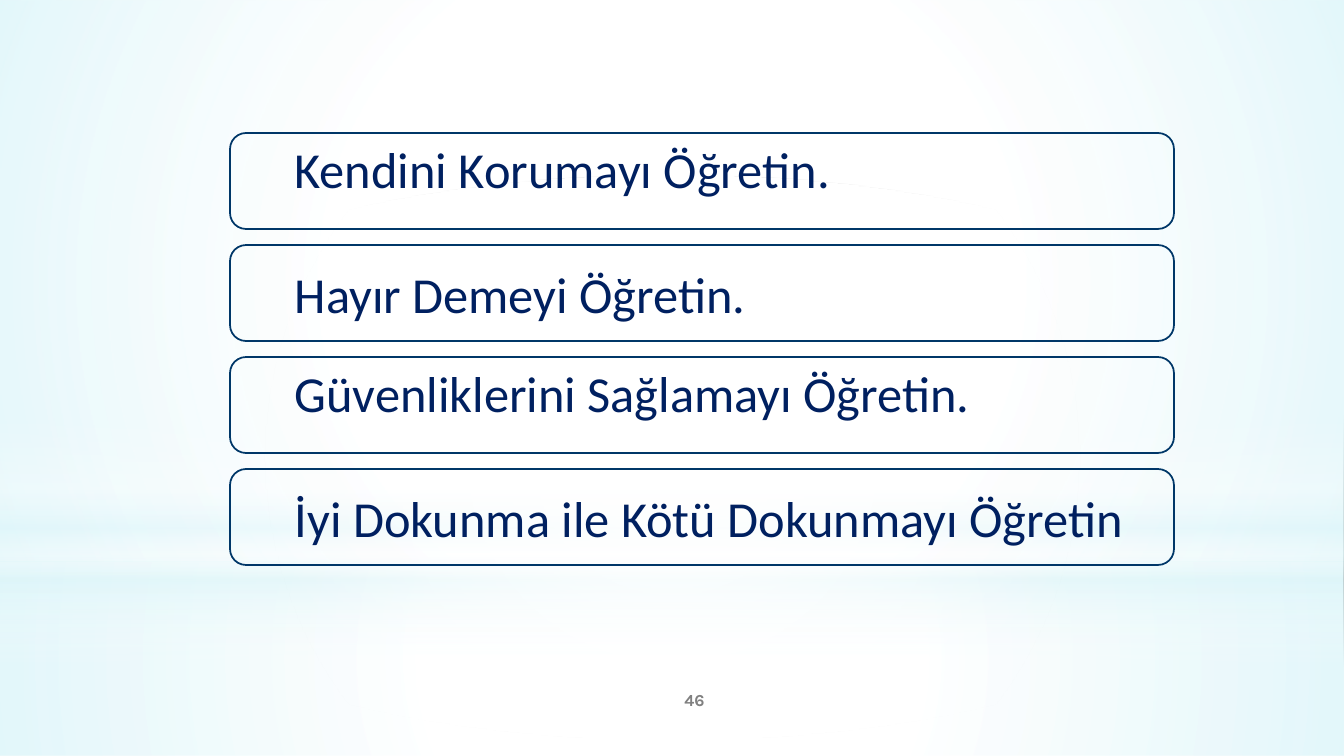
from dataclasses import dataclass

from lxml import etree
from pptx import Presentation
from pptx import util as u
from pptx.dml.color import RGBColor
from pptx.enum import shapes, text
from pptx.oxml import ns

EMU_PER_PX = 914400 / 100.8
WHITE, AQUA, NAVY, OUTLINE, GREY = "FFFFFF", "DBF5F9", "002060", "003768", "808080"


@dataclass
class Stop:
    position: int  # percent
    color: str
    alpha: int = 100  # percent


@dataclass
class Glow:
    top: int
    height: int
    stops: list[Stop]
    radial: bool = True
    outline: shapes.MSO_SHAPE = shapes.MSO_SHAPE.RECTANGLE


@dataclass
class Advice:
    words: str
    raised: bool = False


GLOWS = [
    Glow(562, 194, [Stop(0, WHITE, 91), Stop(37, WHITE, 76), Stop(100, AQUA, 79)]),
    Glow(0, 562, [Stop(0, WHITE, 89), Stop(48, WHITE, 62), Stop(100, AQUA, 79)]),
    Glow(415, 252, [Stop(0, WHITE, 0), Stop(29, WHITE, 30), Stop(45, AQUA, 40),
                    Stop(55, WHITE, 26), Stop(65, AQUA, 60), Stop(100, WHITE, 0)],
         radial=False),
    Glow(176, 562, [Stop(0, WHITE), Stop(56, WHITE, 0)],
         outline=shapes.MSO_SHAPE.OVAL),
]
ADVICE = [
    Advice("Kendini Korumayı Öğretin.", raised=True),
    Advice("Hayır Demeyi Öğretin."),
    Advice("Güvenliklerini Sağlamayı Öğretin.", raised=True),
    Advice("İyi Dokunma ile Kötü Dokunmayı Öğretin"),
]
SLIDE_WIDTH, SLIDE_HEIGHT = 1344, 756
BOX_LEFT, BOX_TOP, BOX_WIDTH, BOX_HEIGHT, BOX_PITCH = 230, 133, 944, 96, 112


def px(length: int) -> u.Emu:
    return u.Emu(round(length * EMU_PER_PX))


def rgb(color: str) -> RGBColor:
    return RGBColor.from_string(color)


def add_words(paragraph, words: str, font: str, size: int, color: str,
              bold: bool = False) -> None:
    run = paragraph.add_run()
    run.text = words
    run.font.name, run.font.size, run.font.bold = font, u.Pt(size), bold
    run.font.color.rgb = rgb(color)


def gradient(glow: Glow):
    fill = etree.Element(ns.qn("a:gradFill"), rotWithShape="1")
    stops = etree.SubElement(fill, ns.qn("a:gsLst"))
    for stop in glow.stops:
        mark = etree.SubElement(stops, ns.qn("a:gs"), pos=str(stop.position * 1000))
        color = etree.SubElement(mark, ns.qn("a:srgbClr"), val=stop.color)
        etree.SubElement(color, ns.qn("a:alpha"), val=str(stop.alpha * 1000))
    if glow.radial:
        circle = etree.SubElement(fill, ns.qn("a:path"), path="circle")
        etree.SubElement(circle, ns.qn("a:fillToRect"),
                         dict.fromkeys("ltrb", "50000"))
    else:
        etree.SubElement(fill, ns.qn("a:lin"), ang="5400000", scaled="0")
    return fill


def add_glow(slide, glow: Glow) -> None:
    band = slide.shapes.add_shape(glow.outline, 0, px(glow.top),
                                  px(SLIDE_WIDTH), px(glow.height))
    band.shadow.inherit = False
    band.line.fill.background()
    band.fill.background()
    properties = band._element.spPr
    properties.replace(properties.find(ns.qn("a:noFill")), gradient(glow))


def add_advice(slide, advice: Advice, row: int) -> None:
    box = slide.shapes.add_shape(
        shapes.MSO_SHAPE.ROUNDED_RECTANGLE, px(BOX_LEFT),
        px(BOX_TOP + row * BOX_PITCH), px(BOX_WIDTH), px(BOX_HEIGHT))
    box.shadow.inherit = False
    box.fill.background()
    box.line.color.rgb = rgb(OUTLINE)
    box.line.width = u.Pt(1.25)

    frame = box.text_frame
    frame.word_wrap = True
    frame.margin_left = px(60)
    frame.vertical_anchor = text.MSO_ANCHOR.MIDDLE
    if advice.raised:
        frame.vertical_anchor = text.MSO_ANCHOR.TOP
        frame.margin_top = frame.margin_bottom = 0
    paragraph = frame.paragraphs[0]
    paragraph.alignment = text.PP_ALIGN.LEFT
    add_words(paragraph, advice.words, "Calibri", 36, NAVY)


def add_page_number(slide, number: str) -> None:
    frame = slide.shapes.add_textbox(px(560), px(680), px(269), px(40)).text_frame
    frame.word_wrap = True
    frame.vertical_anchor = text.MSO_ANCHOR.MIDDLE
    frame.paragraphs[0].alignment = text.PP_ALIGN.CENTER
    add_words(frame.paragraphs[0], number, "Karla", 12, GREY, bold=True)


def main() -> None:
    deck = Presentation()
    deck.slide_width, deck.slide_height = px(SLIDE_WIDTH), px(SLIDE_HEIGHT)
    slide = deck.slides.add_slide(deck.slide_layouts[6])
    slide.background.fill.solid()
    slide.background.fill.fore_color.rgb = rgb(WHITE)

    # Soft backdrop
    for glow in GLOWS:
        add_glow(slide, glow)

    # Page number and advice boxes
    add_page_number(slide, "46")
    for row, advice in enumerate(ADVICE):
        add_advice(slide, advice, row)

    deck.save("out.pptx")


if __name__ == "__main__":
    main()
